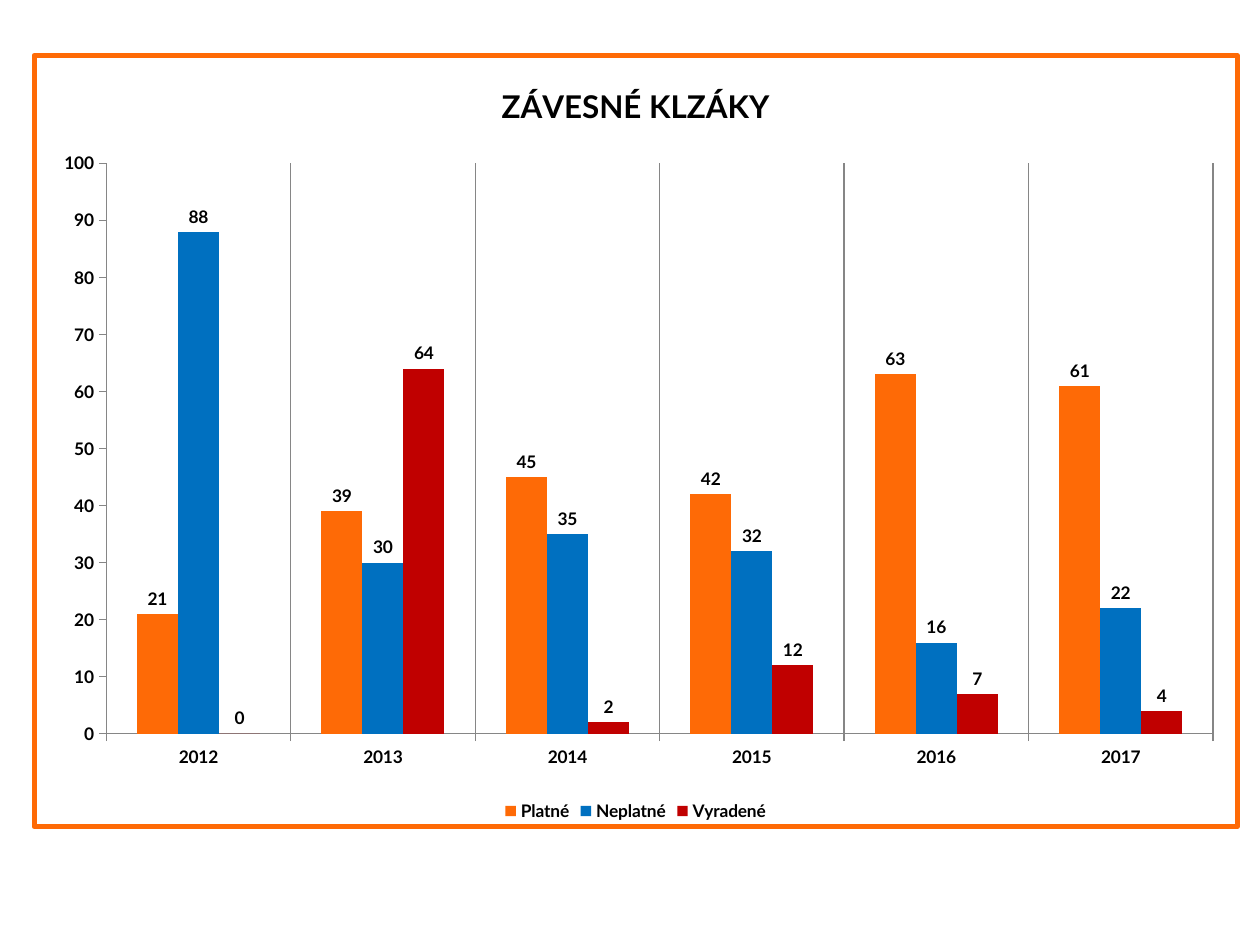
from lxml import etree
from pptx import Presentation
from pptx.chart.data import CategoryChartData
from pptx.dml.color import RGBColor
from pptx.enum.chart import XL_CHART_TYPE, XL_LABEL_POSITION, XL_LEGEND_POSITION, XL_TICK_MARK
from pptx.oxml import parse_xml
from pptx.oxml.ns import nsdecls, qn
from pptx.util import Pt

COLUMN = XL_CHART_TYPE.COLUMN_CLUSTERED
ABOVE = XL_LABEL_POSITION.OUTSIDE_END
BOTTOM = XL_LEGEND_POSITION.BOTTOM
OUT, NO_TICK = XL_TICK_MARK.OUTSIDE, XL_TICK_MARK.NONE

THEME = {
    "font": "Lato", "text": "000000", "grid": "868686", "back": "FFFFFF",
    "valid": "FE6A06", "void": "0070C0", "retired": "C00000",
    "title": 18, "body": 10,
}
YEARS = ["2012", "2013", "2014", "2015", "2016", "2017"]
SERIES = [
    ("Platné", "valid", [21, 39, 45, 42, 63, 61]),
    ("Neplatné", "void", [88, 30, 35, 32, 16, 22]),
    ("Vyradené", "retired", [0, 64, 2, 12, 7, 4]),
]
PLOT = {"x": 0.06, "y": 0.14, "w": 0.92, "h": 0.74}


def style(font, size):
    font.name, font.size, font.bold = THEME["font"], Pt(size), True
    font.color.rgb = RGBColor.from_string(THEME["text"])


def rule(line):
    """Give a chart line the thin grey look."""
    line.width = Pt(0.75)
    line.color.rgb = RGBColor.from_string(THEME["grid"])


deck = Presentation()
deck.slide_width, deck.slide_height = Pt(720), Pt(540)
slide = deck.slides.add_slide(deck.slide_layouts[6])

data = CategoryChartData()
data.categories = YEARS
for name, _, values in SERIES:
    data.add_series(name, values)
frame = slide.shapes.add_chart(COLUMN, Pt(18), Pt(30.24), Pt(690.48), Pt(443.52), data)
chart = frame.chart
style(chart.font, THEME["body"])

# Title and legend
chart.has_title = True
title = chart.chart_title
title.include_in_layout = False
title.text_frame.text = "ZÁVESNÉ KLZÁKY"
style(title.text_frame.paragraphs[0].font, THEME["title"])
chart.has_legend = True
chart.legend.position = BOTTOM
chart.legend.include_in_layout = False
style(chart.legend.font, THEME["body"])

# Axes
years, counts = chart.category_axis, chart.value_axis
for axis in (years, counts):
    axis.major_tick_mark, axis.minor_tick_mark = OUT, NO_TICK
    style(axis.tick_labels.font, THEME["body"])
    rule(axis.format.line)
years.has_major_gridlines = True
rule(years.major_gridlines.format.line)
counts.has_major_gridlines = False
counts.minimum_scale, counts.maximum_scale, counts.major_unit = 0, 100, 10

# Columns
plot = chart.plots[0]
plot.vary_by_categories = False
plot.gap_width, plot.overlap = 150, 0
for series, (_, tone, _) in zip(plot.series, SERIES):
    series.format.fill.solid()
    series.format.fill.fore_color.rgb = RGBColor.from_string(THEME[tone])
    labels = series.data_labels
    labels.show_value = True
    labels.position = ABOVE
    style(labels.font, THEME["body"])

# Plot position
root = chart.element
area = root.find(qn("c:chart")).find(qn("c:plotArea"))
old = area.find(qn("c:layout"))
if old is not None:
    area.remove(old)
layout = etree.Element(qn("c:layout"))
manual = etree.SubElement(layout, qn("c:manualLayout"))
parts = [("layoutTarget", "inner"), ("xMode", "edge"), ("yMode", "edge"), *PLOT.items()]
for tag, value in parts:
    etree.SubElement(manual, qn(f"c:{tag}")).set("val", str(value))
area.insert(0, layout)

# Frame around the chart
border = parse_xml(
    f'<c:spPr {nsdecls("c", "a")}>'
    f'<a:solidFill><a:srgbClr val="{THEME["back"]}"/></a:solidFill>'
    f'<a:ln w="{Pt(3)}"><a:solidFill><a:srgbClr val="{THEME["valid"]}"/></a:solidFill>'
    '<a:round/></a:ln></c:spPr>'
)
root.find(qn("c:chart")).addnext(border)

deck.save("out.pptx")
